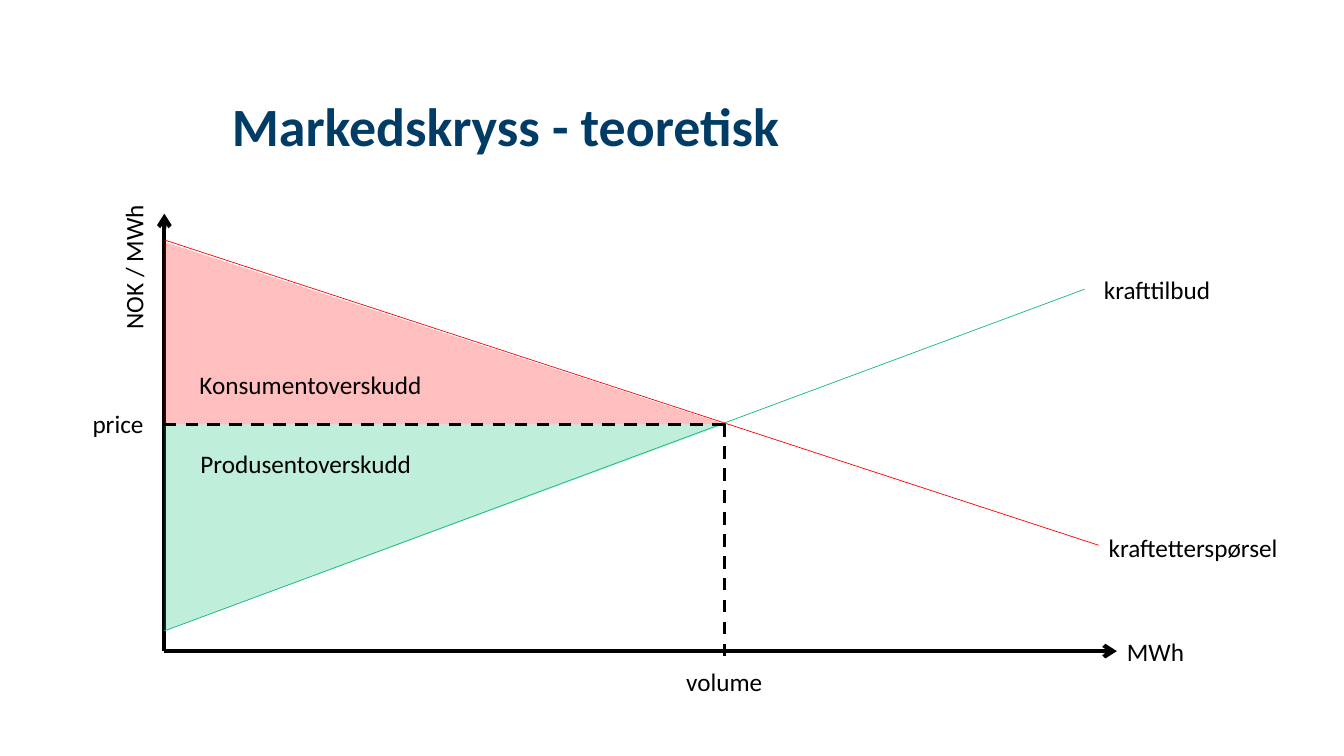
from lxml import etree
from pptx import Presentation
from pptx.dml.color import RGBColor
from pptx.enum import dml, shapes, text
from pptx.oxml.ns import qn
from pptx.util import Pt

FONT = "Calibri"
COLORS = {"title": "003C65", "ink": "000000", "supply": "14B978",
          "demand": "FF0000", "consumer": "FF0000", "producer": "00BD72"}
TITLE = "Markedskryss - teoretisk"

ORIGIN = (117.4, 465.1)
CROSS = (517.7, 303.1)
DEMAND_START = (ORIGIN[0], 171.4)
SUPPLY_START = (ORIGIN[0], 450.7)
PRICE_POINT = (ORIGIN[0], CROSS[1])
TICK = 7.2

AXES = [(117.4, 152.6), (797.8, 465.1)]
CURVES = [
    (SUPPLY_START, (774.7, 206.6), "supply"),
    (DEMAND_START, (784.8, 389.5), "demand"),
]
SURPLUSES = [
    ((ORIGIN[0], 172.8), "consumer"),
    (SUPPLY_START, "producer"),
]
GUIDES = [(ORIGIN[0] - TICK, CROSS[1]), (CROSS[0], ORIGIN[1] + TICK)]
LABEL_HEIGHT = 29
LABELS = [
    ("MWh", 797.8, 450.7, 56.2, 0),
    ("NOK / MWh", 43.2, 175.7, 104.4, 270),
    ("price", 59, 288, 51.1, 0),
    ("volume", 483.1, 472.3, 69.8, 0),
    ("Konsumentoverskudd", 135.4, 259.9, 175, 0),
    ("Produsentoverskudd", 136.1, 316.4, 172.1, 0),
    ("kraftetterspørsel", 784.8, 376.6, 136.8, 0),
    ("krafttilbud", 781.4, 192.5, 92.2, 0),
]


def rgb(name):
    return RGBColor.from_string(COLORS[name])


def add_line(s, start, end, color, width, dash=None, arrow=False):
    c = s.shapes.add_connector(shapes.MSO_CONNECTOR.STRAIGHT,
                               *(Pt(v) for v in start + end))
    c.line.color.rgb = rgb(color)
    c.line.width = Pt(width)
    if dash:
        c.line.dash_style = dash
    if arrow:
        etree.SubElement(c.line._get_or_add_ln(), qn("a:tailEnd"), type="arrow")
    etree.SubElement(c._element.spPr, qn("a:effectLst"))


def add_surplus(s, start, color):
    corners = [tuple(Pt(v) for v in pt) for pt in (start, CROSS, PRICE_POINT)]
    fb = s.shapes.build_freeform(*corners[0])
    fb.add_line_segments(corners[1:], close=True)
    sp = fb.convert_to_shape()
    sp.shadow.inherit = False
    sp.fill.solid()
    sp.fill.fore_color.rgb = rgb(color)
    sp.line.fill.background()
    clr = sp._element.spPr.find(qn("a:solidFill"))[0]
    etree.SubElement(clr, qn("a:alpha"), val="25000")


def add_label(s, label, x, y, width, rotation):
    sp = s.shapes.add_textbox(Pt(x), Pt(y), Pt(width), Pt(LABEL_HEIGHT))
    sp.rotation = rotation
    tf = sp.text_frame
    tf.word_wrap = False
    tf.auto_size = text.MSO_AUTO_SIZE.SHAPE_TO_FIT_TEXT
    p = tf.paragraphs[0]
    p.text = label
    p.font.name = FONT
    p.font.size = Pt(18)
    p.font.color.rgb = rgb("ink")


def add_title(s):
    sp = s.shapes.title
    sp.left, sp.top, sp.width, sp.height = Pt(165.6), Pt(30.2), Pt(738), Pt(82.8)
    tf = sp.text_frame
    tf.margin_left = tf.margin_top = tf.margin_right = tf.margin_bottom = 0
    tf.vertical_anchor = text.MSO_ANCHOR.BOTTOM
    tf.auto_size = text.MSO_AUTO_SIZE.NONE
    p = tf.paragraphs[0]
    p.text = TITLE
    p.alignment = text.PP_ALIGN.LEFT
    p.line_spacing = 0.9
    p.font.name = FONT
    p.font.size = Pt(38.5)
    p.font.bold = True
    p.font.color.rgb = rgb("title")


def main():
    prs = Presentation()
    prs.slide_width, prs.slide_height = Pt(960), Pt(540)
    s = prs.slides.add_slide(prs.slide_layouts[5])
    add_title(s)
    for end in AXES:
        add_line(s, ORIGIN, end, "ink", 3, arrow=True)
    for start, end, color in CURVES:
        add_line(s, start, end, color, 0.5)
    for start, color in SURPLUSES:
        add_surplus(s, start, color)
    for end in GUIDES:
        add_line(s, CROSS, end, "ink", 2.25, dash=dml.MSO_LINE.DASH)
    for label in LABELS:
        add_label(s, *label)
    prs.save("out.pptx")


if __name__ == "__main__":
    main()
